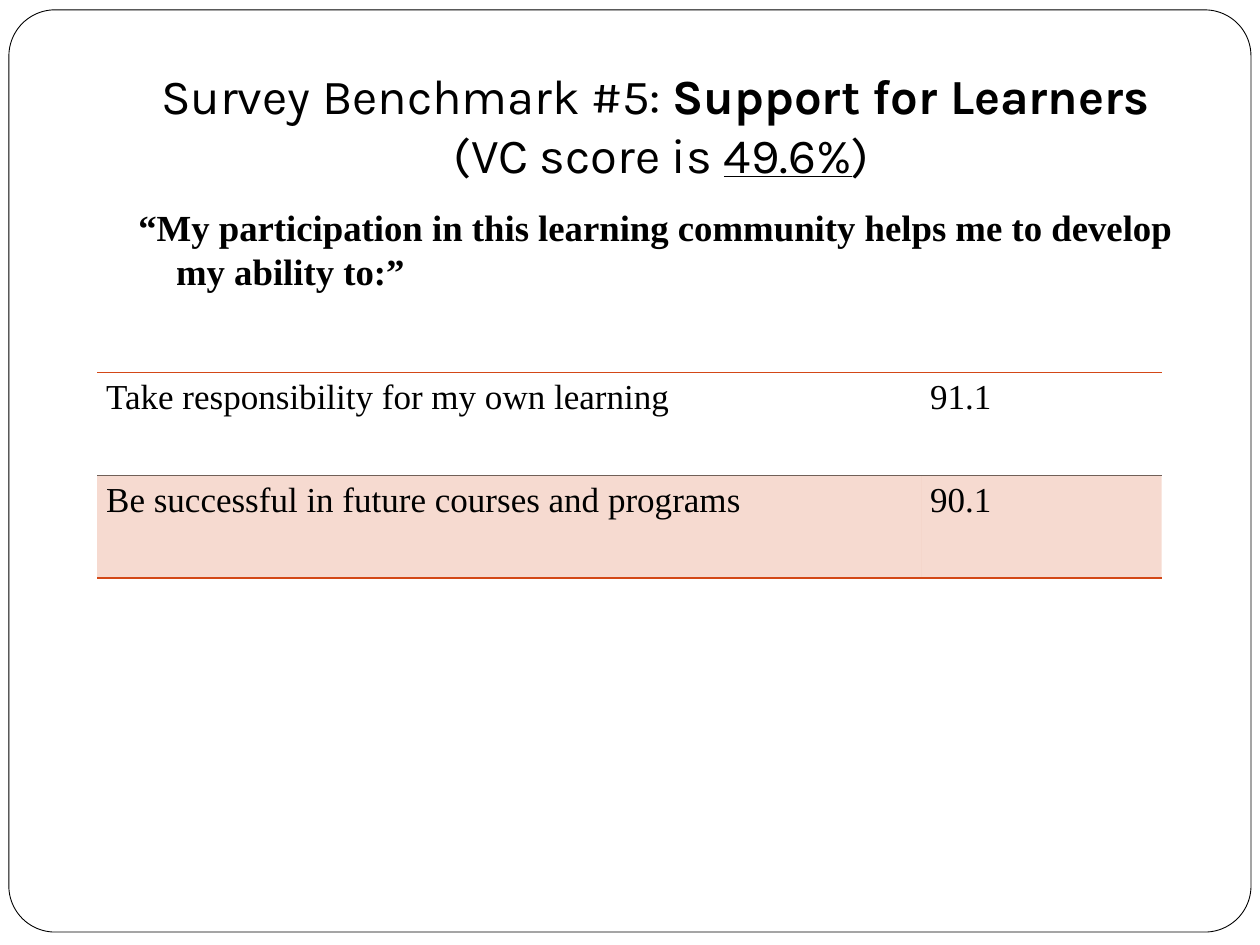
from lxml.etree import SubElement
from pptx import Presentation
from pptx.dml.color import RGBColor
from pptx.enum.shapes import MSO_SHAPE as Shape
from pptx.enum.text import MSO_ANCHOR as Anchor, MSO_AUTO_SIZE as AutoSize, PP_ALIGN as Align
from pptx.oxml import parse_xml
from pptx.oxml.ns import nsdecls, qn
from pptx.util import Cm, Pt

BLACK = RGBColor(0x00, 0x00, 0x00)
WHITE = RGBColor(0xFF, 0xFF, 0xFF)
GRAY = RGBColor(0x70, 0x60, 0x58)
ORANGE = RGBColor(0xD3, 0x48, 0x17)
HEADING_FONT = "Karla"
BODY_FONT = "Times New Roman"
TITLE_ONLY = 5


def border(cell, side, color=None, width=1):
    """Draw one cell side (L, R, T or B); without a color the side stays bare."""
    fill = f'<a:solidFill><a:srgbClr val="{color}"/></a:solidFill>' if color else "<a:noFill/>"
    line = parse_xml(f'<a:ln{side} {nsdecls("a")} w="{Pt(width)}">{fill}</a:ln{side}>')
    cell._tc.get_or_add_tcPr().append(line)


class SlideBuilder:
    def __init__(self, slide):
        self.slide = slide

    def style(self, paragraph, font_name, size):
        font = paragraph.font
        font.name, font.size = font_name, Pt(size)
        font.color.rgb = BLACK

    def frame(self, left, top, width, height):
        """Add the rounded page outline behind everything else."""
        outline = self.slide.shapes.add_shape(Shape.ROUNDED_RECTANGLE, left, top, width, height)
        outline.adjustments[0] = 0.05
        outline.shadow.inherit = False
        outline.fill.solid()
        outline.fill.fore_color.rgb = WHITE
        outline.line.color.rgb = BLACK
        outline.line.width = Pt(0.5)
        self.slide.shapes._spTree.insert(2, outline._element)

    def title(self, left, top, width, height, lines):
        """Lines hold (text, emphasis) parts; emphasis names a font switch or is None."""
        title = self.slide.shapes.title
        title.left, title.top, title.width, title.height = left, top, width, height
        text = title.text_frame
        text.auto_size = AutoSize.NONE
        text.vertical_anchor = Anchor.BOTTOM
        text.margin_bottom = Cm(0.25)
        heading = text.paragraphs[0]
        heading.alignment = Align.CENTER
        self.style(heading, HEADING_FONT, 28)
        for number, line in enumerate(lines):
            if number:
                heading.add_line_break()
            for words, emphasis in line:
                run = heading.add_run()
                run.text = words
                if emphasis:
                    setattr(run.font, emphasis, True)

    def statement(self, left, top, width, height, words):
        """Add a bold paragraph with a hanging indent."""
        text = self.slide.shapes.add_textbox(left, top, width, height).text_frame
        text.word_wrap = True
        paragraph = text.paragraphs[0]
        paragraph.text = words
        paragraph.space_before = Pt(5.8)
        self.style(paragraph, BODY_FONT, 21)
        paragraph.font.bold = True
        properties = paragraph._p.get_or_add_pPr()
        properties.set("marL", str(Cm(0.76)))
        properties.set("indent", str(-Cm(0.76)))

    def score_table(self, left, top, column_widths, row_height, scores):
        table = self.slide.shapes.add_table(
            len(scores), len(column_widths), left, top,
            sum(column_widths), row_height * len(scores)).table
        table.first_row = table.horz_banding = False
        for column, width in zip(table.columns, column_widths):
            column.width = width
        for index, record in enumerate(scores):
            for cell, words in zip(table.rows[index].cells, record):
                self.score_cell(cell, words, index, index == len(scores) - 1)

    def score_cell(self, cell, words, row, is_last):
        cell.margin_left = cell.margin_right = Cm(0.18)
        cell.margin_top = cell.margin_bottom = 0
        paragraph = cell.text_frame.paragraphs[0]
        paragraph.text = words
        paragraph.line_spacing = 1.15
        paragraph.space_after = Pt(10)
        self.style(paragraph, BODY_FONT, 20)
        inner = (GRAY, 0.5)
        outer = (ORANGE, 1)
        border(cell, "L")
        border(cell, "R")
        border(cell, "T", *(inner if row else outer))
        border(cell, "B", *(outer if is_last else inner))
        if row % 2:
            cell.fill.solid()
            cell.fill.fore_color.rgb = ORANGE
            tint = cell._tc.tcPr.find(qn("a:solidFill")).find(qn("a:srgbClr"))
            SubElement(tint, qn("a:alpha")).set("val", "20000")
        else:
            cell.fill.background()


def main():
    deck = Presentation()
    deck.slide_width, deck.slide_height = Cm(25.4), Cm(19.05)
    builder = SlideBuilder(deck.slides.add_slide(deck.slide_layouts[TITLE_ONLY]))
    builder.frame(Cm(0.18), Cm(0.2), Cm(25.04), Cm(18.59))
    builder.title(Cm(2.54), Cm(0.76), Cm(21.59), Cm(3.18), [
        [("Survey Benchmark #5: ", None), ("Support for Learners ", "bold")],
        [("(VC score is ", None), ("49.6%", "underline"), (")", None)],
    ])
    builder.statement(
        Cm(2.54), Cm(4.01), Cm(21.59), Cm(12.7),
        "“My participation in this learning community helps me to develop my ability to:”")
    builder.score_table(Cm(1.96), Cm(7.51), [Cm(16.61), Cm(4.85)], Cm(2.07), [
        ("Take responsibility for my own learning", "91.1"),
        ("Be successful in future courses and programs", "90.1"),
    ])
    deck.save("out.pptx")


if __name__ == "__main__":
    main()
